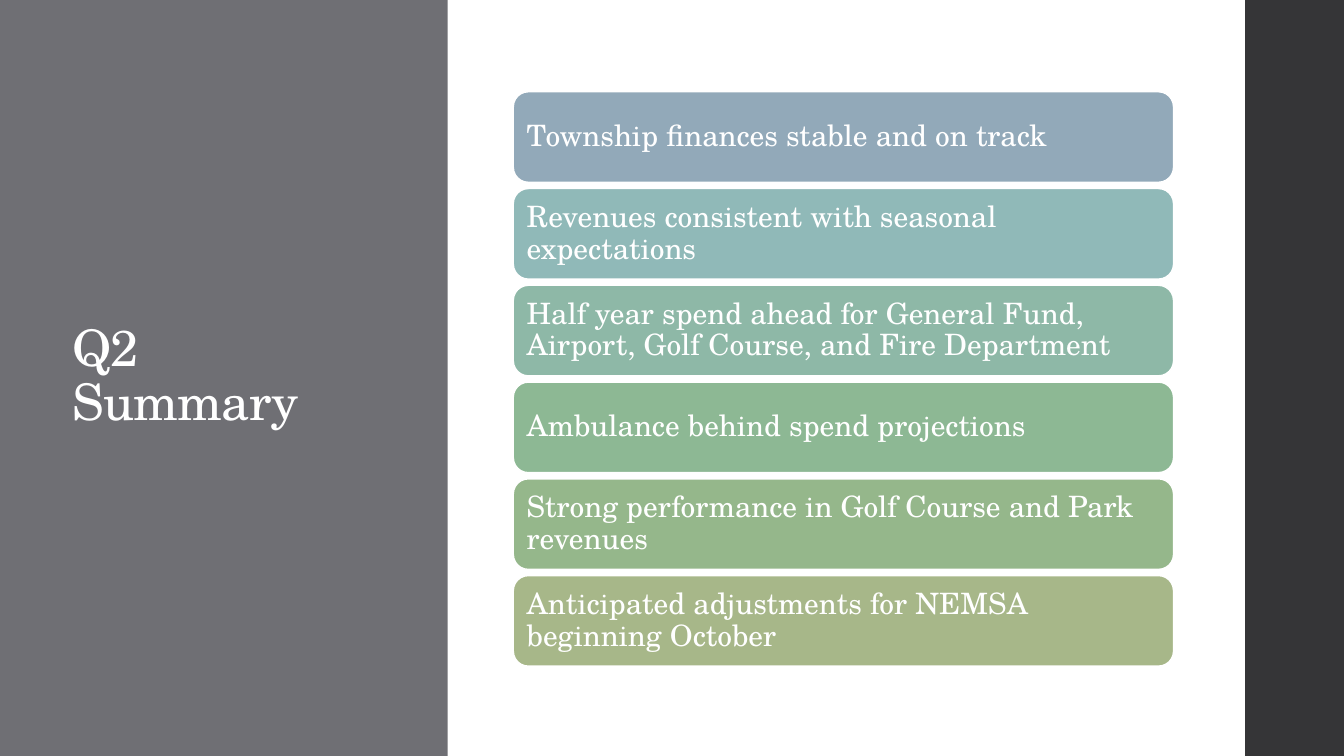
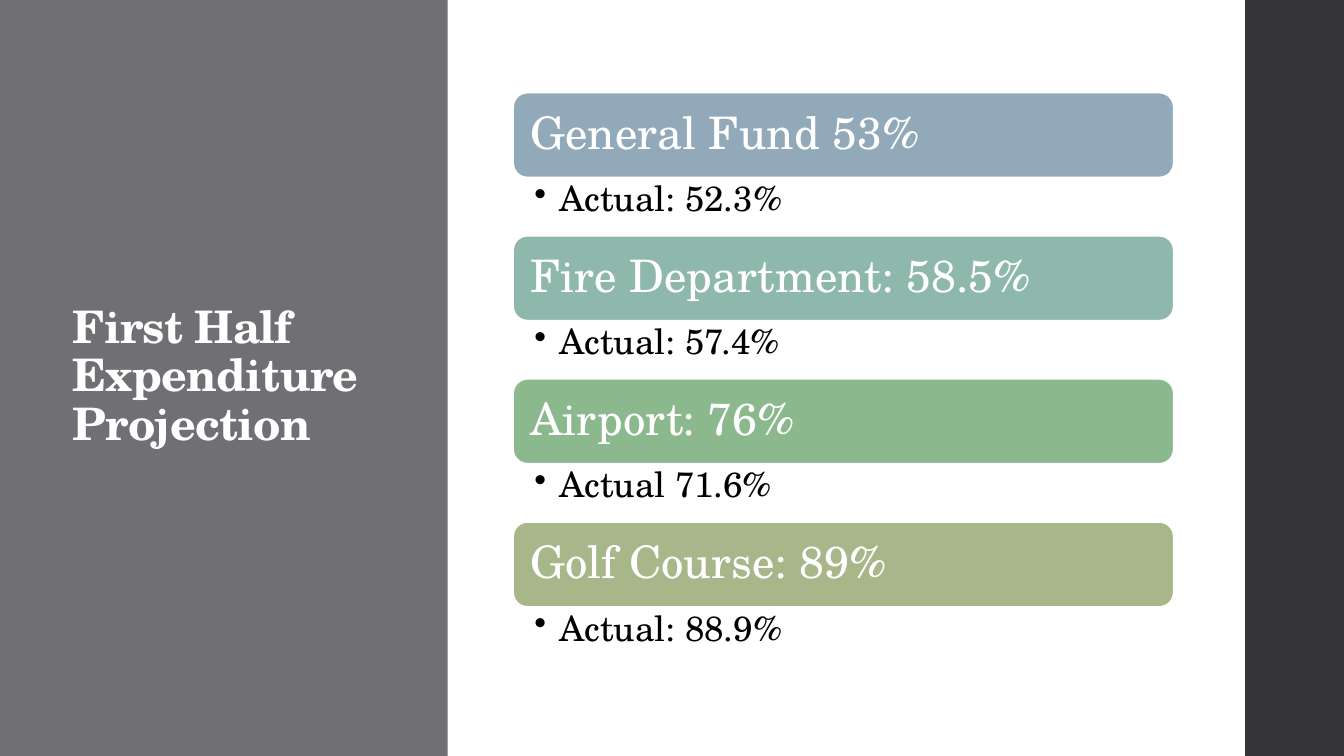
from lxml import etree
from pptx import Presentation
from pptx import util as u
from pptx.dml.color import RGBColor
from pptx.enum import shapes, text
from pptx.oxml import ns

PX = 9144  # 100 px to the inch
SLIDE_W, SLIDE_H = 1333, 750
FONT = "TeX Gyre Schola"
COLORS = {
    "panel": "6F6F74",
    "edge": "353537",
    "white": "FFFFFF",
    "black": "000000",
    "slate": "92A9B9",
    "teal": "90B9B8",
    "seafoam": "8FB8AD",
    "jade": "8EB8A7",
    "mint": "8DB894",
    "green": "8CB88E",
    "moss": "95B78B",
    "olive": "A7B789",
}
CARD_X, CARD_W = 509, 655

SUMMARY = [
    ("Township finances stable and on track", "slate"),
    ("Revenues consistent with seasonal expectations", "teal"),
    ("Half year spend ahead for General Fund, Airport, Golf Course, and Fire Department", "jade"),
    ("Ambulance behind spend projections", "mint"),
    ("Strong performance in Golf Course and Park revenues", "moss"),
    ("Anticipated adjustments for NEMSA beginning October", "olive"),
]
PROJECTIONS = [
    ("General Fund 53%", "Actual: 52.3%", "slate"),
    ("Fire Department: 58.5%", "Actual: 57.4%", "seafoam"),
    ("Airport: 76%", "Actual 71.6%", "green"),
    ("Golf Course: 89%", "Actual: 88.9%", "olive"),
]


def rgb(name):
    return RGBColor.from_string(COLORS[name])


def emu(*lengths):
    return [u.Emu(length * PX) for length in lengths]


def write(shape, wording, size, color, insets, anchor, bold=False):
    """Fill a shape with one left-aligned paragraph and return it."""
    frame = shape.text_frame
    frame.word_wrap = True
    frame.vertical_anchor = anchor
    (frame.margin_left, frame.margin_top,
     frame.margin_right, frame.margin_bottom) = emu(*insets)
    paragraph = frame.paragraphs[0]
    paragraph.text = wording
    paragraph.alignment = text.PP_ALIGN.LEFT
    paragraph.line_spacing = 0.9
    font = paragraph.font
    font.name, font.size, font.bold = FONT, u.Pt(size), bold
    font.color.rgb = rgb(color)
    return paragraph


def add_block(slide, kind, box, fill):
    block = slide.shapes.add_shape(kind, *emu(*box))
    block.shadow.inherit = False
    block.fill.solid()
    block.fill.fore_color.rgb = rgb(fill)
    block.line.fill.background()
    return block


def add_framed_slide(deck, title, title_w, size, bold=False):
    """Add a slide with the title panel on the left and the dark right edge."""
    slide = deck.slides.add_slide(deck.slide_layouts[6])
    rectangle = shapes.MSO_SHAPE.RECTANGLE
    add_block(slide, rectangle, (0, 0, 444, SLIDE_H), "panel")
    add_block(slide, rectangle, (1235, 0, SLIDE_W - 1235, SLIDE_H), "edge")
    heading = slide.shapes.add_textbox(*emu(62, 91, title_w, 567))
    paragraph = write(heading, title, size, "white", (10, 5, 10, 5),
                      text.MSO_ANCHOR.MIDDLE, bold)
    paragraph.runs[0]._r.get_or_add_rPr().set("spc", "-50")
    return slide


def add_card(slide, box, wording, fill, size, inset):
    card = add_block(slide, shapes.MSO_SHAPE.ROUNDED_RECTANGLE, box, fill)
    card.line.color.rgb = rgb("white")
    card.line.width = u.Pt(1.1)
    write(card, wording, size, "white", (inset,) * 4, text.MSO_ANCHOR.MIDDLE)


def add_bullet(slide, box, wording):
    detail = slide.shapes.add_textbox(*emu(*box))
    paragraph = write(detail, wording, 25, "black", (21, 4, 25, 4),
                      text.MSO_ANCHOR.TOP)
    properties = paragraph._p.get_or_add_pPr()
    properties.set("marL", str(25 * PX))
    properties.set("indent", str(-25 * PX))
    mark = etree.Element(ns.qn("a:buChar"), char="•")
    properties.find(ns.qn("a:defRPr")).addprevious(mark)


def add_summary(deck):
    slide = add_framed_slide(deck, "Q2 Summary", 297, 36)
    top, height, gap = 91, 90, 6
    for row, (wording, fill) in enumerate(SUMMARY):
        box = (CARD_X, top + row * (height + gap), CARD_W, height)
        add_card(slide, box, wording, fill, 21, 9)


def add_projections(deck):
    slide = add_framed_slide(deck, "First Half Expenditure Projection", 377, 32, True)
    top, card_h, detail_h = 92, 84, 58
    for row, (projected, actual, fill) in enumerate(PROJECTIONS):
        y = top + row * (card_h + detail_h)
        add_card(slide, (CARD_X, y, CARD_W, card_h), projected, fill, 32, 13)
        add_bullet(slide, (CARD_X, y + card_h, CARD_W, detail_h), actual)


def main():
    deck = Presentation()
    deck.slide_width, deck.slide_height = emu(SLIDE_W, SLIDE_H)
    add_summary(deck)
    add_projections(deck)
    deck.save("out.pptx")


if __name__ == "__main__":
    main()
